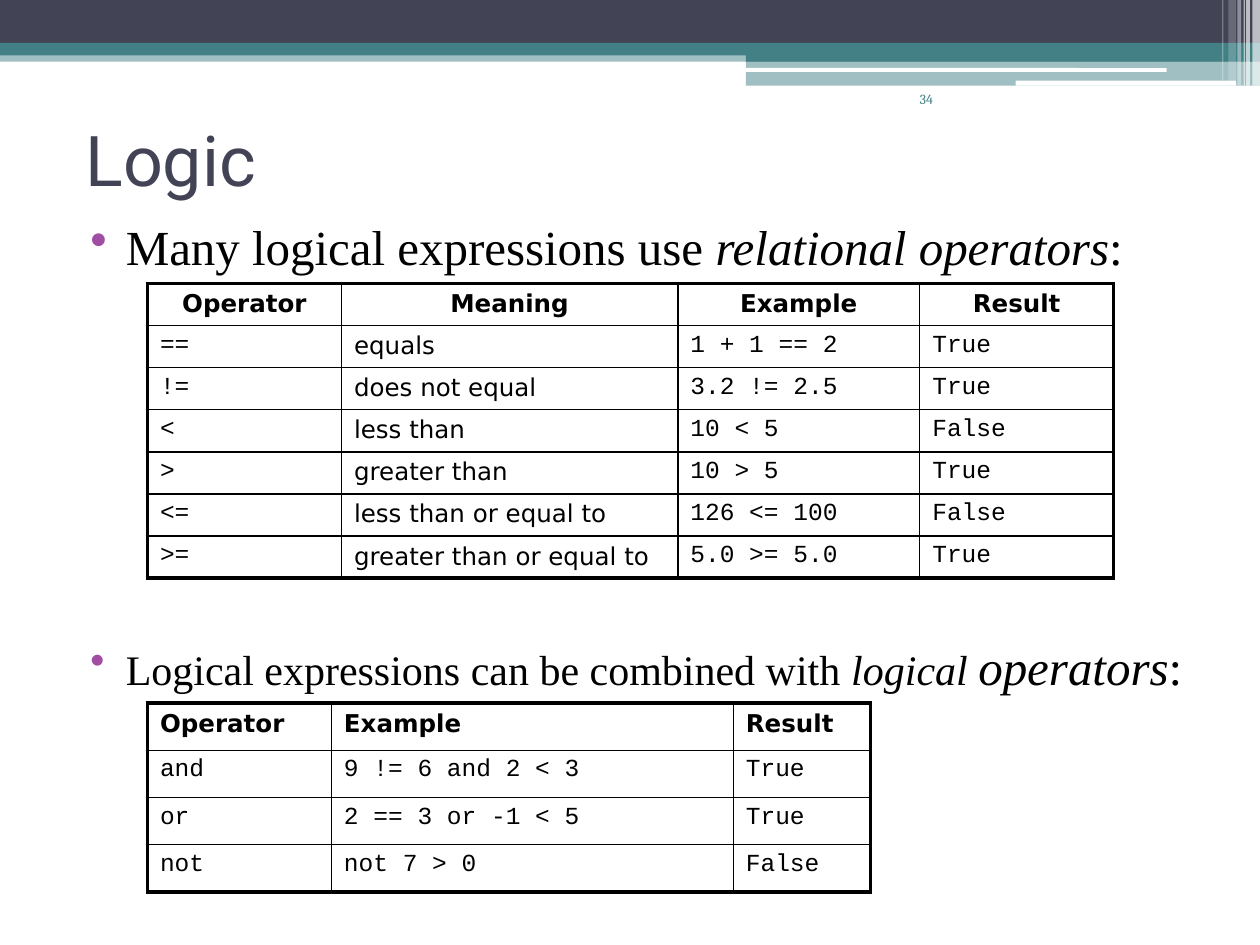
from lxml import etree
from pptx import Presentation
from pptx.dml.color import RGBColor
from pptx.enum.shapes import MSO_SHAPE
from pptx.enum.text import MSO_ANCHOR, PP_ALIGN
from pptx.oxml.ns import qn
from pptx.util import Inches, Pt

RECTANGLE = MSO_SHAPE.RECTANGLE
ROUNDED = MSO_SHAPE.ROUNDED_RECTANGLE
TOP, MIDDLE = MSO_ANCHOR.TOP, MSO_ANCHOR.MIDDLE
LEFT, CENTER = PP_ALIGN.LEFT, PP_ALIGN.CENTER

BLACK = RGBColor(0x00, 0x00, 0x00)
WHITE = RGBColor(0xFF, 0xFF, 0xFF)
NAVY = RGBColor(0x42, 0x44, 0x56)
TEAL = RGBColor(0x43, 0x80, 0x86)
PURPLE = RGBColor(0xA0, 0x4D, 0xA3)

SERIF = "Times New Roman"
SANS = "DejaVu Sans"
MONO = "Courier New"
THIN, THICK = 1, 2.25

BANDS = [
    (RECTANGLE, 0, 0.4, 10, 0.09, TEAL, 50),
    (RECTANGLE, 0, 0, 10, 0.34, NAVY, 100),
    (RECTANGLE, 0, 0.34, 10, 0.1, TEAL, 100),
    (RECTANGLE, 5.92, 0.39, 4.08, 0.1, TEAL, 100),
    (RECTANGLE, 5.92, 0.48, 4.08, 0.2, TEAL, 50),
    (ROUNDED, 5.91, 0.54, 3.35, 0.03, WHITE, 100),
    (ROUNDED, 8.06, 0.64, 1.75, 0.04, WHITE, 100),
]
STRIPES = [
    (9.94, 0.06, 0.68, 65),
    (9.89, 0.03, 0.68, 65),
    (9.87, 0.01, 0.68, 60),
    (9.82, 0.03, 0.68, 40),
    (9.75, 0.06, 0.64, 20),
    (9.7, 0.01, 0.64, 30),
]
RELATIONAL = [
    ("Operator", "Meaning", "Example", "Result"),
    ("==", "equals", "1 + 1 == 2", "True"),
    ("!=", "does not equal", "3.2 != 2.5", "True"),
    ("<", "less than", "10 < 5", "False"),
    (">", "greater than", "10 > 5", "True"),
    ("<=", "less than or equal to", "126 <= 100", "False"),
    (">=", "greater than or equal to", "5.0 >= 5.0", "True"),
]
LOGICAL = [
    ("Operator", "Example", "Result"),
    ("and", "9 != 6 and 2 < 3", "True"),
    ("or", "2 == 3 or -1 < 5", "True"),
    ("not", "not 7 > 0", "False"),
]


def add_run(paragraph, text, font=SERIF, size=28, color=BLACK, bold=False, italic=False):
    """Append formatted text to a paragraph."""
    run = paragraph.add_run()
    run.text = text
    run.font.name = font
    run.font.size = Pt(size)
    run.font.color.rgb = color
    run.font.bold = bold
    run.font.italic = italic


class SlideBuilder:
    """Draw styled elements on the current slide."""

    def __init__(self, slide):
        self.slide = slide

    def band(self, kind, left, top, width, height, color, opacity):
        """Add a borderless, possibly translucent shape."""
        shape = self.slide.shapes.add_shape(
            kind, Inches(left), Inches(top), Inches(width), Inches(height))
        shape.shadow.inherit = False
        shape.line.fill.background()
        shape.fill.solid()
        shape.fill.fore_color.rgb = color
        if opacity < 100:
            color_element = shape.fill._xPr.find(qn("a:solidFill"))[0]
            etree.SubElement(color_element, qn("a:alpha"), val=str(opacity * 1000))

    def text(self, left, top, width, height, content, anchor=TOP, **style):
        """Add a wrapped text box and return its paragraph."""
        frame = self.slide.shapes.add_textbox(
            Inches(left), Inches(top), Inches(width), Inches(height)).text_frame
        frame.word_wrap = True
        frame.vertical_anchor = anchor
        paragraph = frame.paragraphs[0]
        add_run(paragraph, content, **style)
        return paragraph

    def bullet(self, top, content, size, emphasis):
        """Add a bulleted statement ending in italic words and a colon."""
        paragraph = self.text(0.5, top, 9.2, 0.55, content, size=size)
        paragraph.space_before = Pt(3)
        for words, words_size in emphasis:
            add_run(paragraph, words, size=words_size, italic=True)
        add_run(paragraph, ":")
        properties = paragraph._p.get_or_add_pPr()
        properties.set("marL", str(Inches(0.4)))
        properties.set("indent", str(Inches(-0.28)))
        bullet_color = etree.SubElement(properties, qn("a:buClr"))
        etree.SubElement(bullet_color, qn("a:srgbClr"), val=str(PURPLE))
        etree.SubElement(properties, qn("a:buChar"), char="•")

    def border(self, cell, side, width):
        """Draw one black edge of a table cell."""
        line = etree.SubElement(
            cell._tc.get_or_add_tcPr(), qn(f"a:ln{side}"), w=str(Pt(width)))
        fill = etree.SubElement(line, qn("a:solidFill"))
        etree.SubElement(fill, qn("a:srgbClr"), val=str(BLACK))

    def table(self, top, rows, widths, row_height, header_align, sans_column=None):
        """Add a table with a thick outline and thin inner lines."""
        last_row, last_column = len(rows) - 1, len(widths) - 1
        table = self.slide.shapes.add_table(
            len(rows), len(widths), Inches(1.17), Inches(top),
            Inches(sum(widths)), Inches(row_height * len(rows))).table
        table.first_row = False
        table.horz_banding = False
        for column, width in zip(table.columns, widths):
            column.width = Inches(width)
        for row_index, values in enumerate(rows):
            table.rows[row_index].height = Inches(row_height)
            header = row_index == 0
            for column_index, value in enumerate(values):
                cell = table.cell(row_index, column_index)
                outer = {"L": column_index == 0, "R": column_index == last_column,
                         "T": header, "B": row_index == last_row}
                for side, is_outer in outer.items():
                    self.border(cell, side, THICK if is_outer else THIN)
                cell.fill.background()
                paragraph = cell.text_frame.paragraphs[0]
                paragraph.alignment = header_align if header else LEFT
                font = SANS if header or column_index == sans_column else MONO
                add_run(paragraph, value, font=font, size=14, bold=header)


def main():
    """Build the logic slide."""
    presentation = Presentation()
    presentation.slide_width = Inches(10)
    presentation.slide_height = Inches(7.5)
    builder = SlideBuilder(presentation.slides.add_slide(presentation.slide_layouts[6]))
    for band in BANDS:
        builder.band(*band)
    for left, width, height, opacity in STRIPES:
        builder.band(RECTANGLE, left, 0, width, height, WHITE, opacity)
    builder.text(7.2, 0.67, 1.05, 0.5, "34", font="Cambria", size=8, color=TEAL)
    builder.text(0.58, 0.67, 9, 1.17, "Logic", anchor=MIDDLE,
                 font="Roboto", size=40, color=NAVY)
    builder.bullet(1.67, "Many logical expressions use ", 28,
                   [("relational operators", 28)])
    builder.bullet(5, "Logical expressions can be combined with ", 24,
                   [("logical ", 24), ("operators", 28)])
    builder.table(5.58, LOGICAL, [1.46, 3.19, 1.09], 0.375, LEFT)
    builder.table(2.25, RELATIONAL, [1.54, 2.67, 1.92, 1.54], 0.33, CENTER, sans_column=1)
    presentation.save("out.pptx")


if __name__ == "__main__":
    main()
